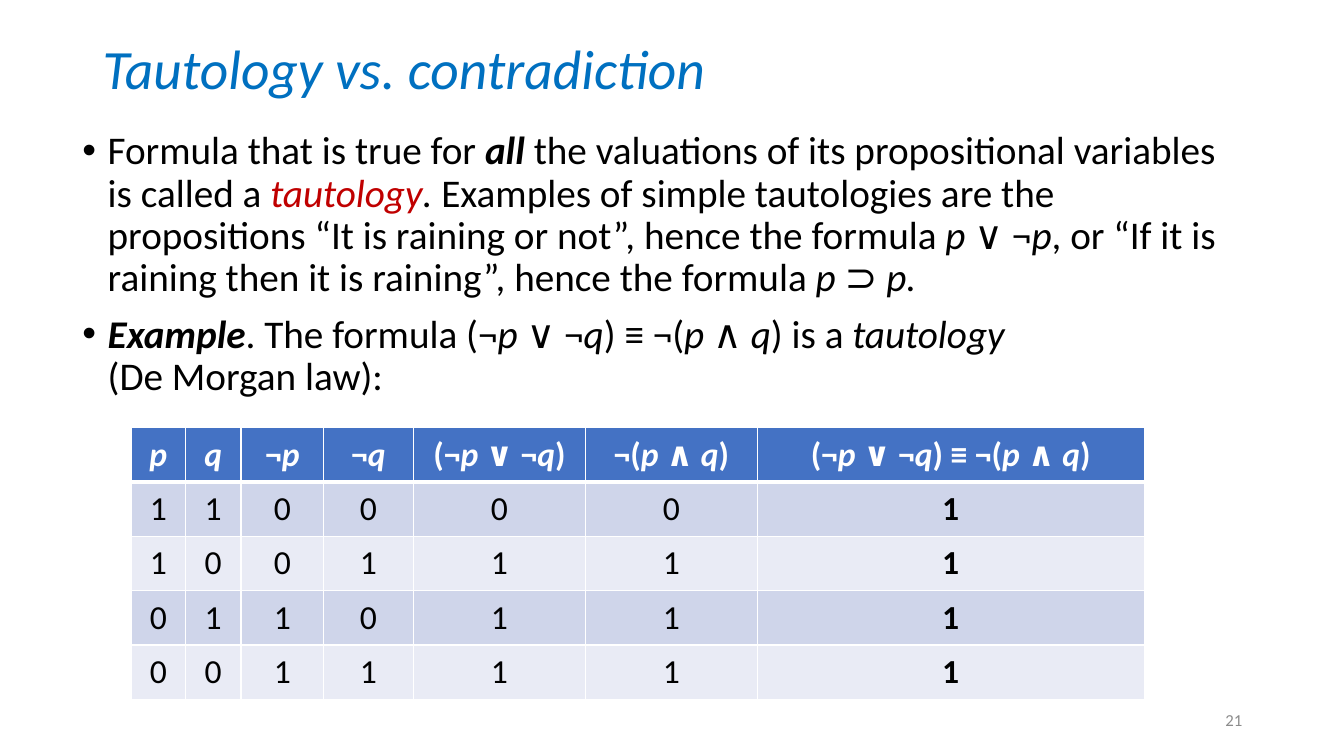
from itertools import groupby, product

from lxml import etree
from pptx import Presentation
from pptx.dml.color import RGBColor
from pptx.enum.text import MSO_ANCHOR, PP_ALIGN
from pptx.oxml.ns import qn
from pptx.util import Inches, Pt

LEFT, CENTER, RIGHT = PP_ALIGN.LEFT, PP_ALIGN.CENTER, PP_ALIGN.RIGHT
TOP, MIDDLE = MSO_ANCHOR.TOP, MSO_ANCHOR.MIDDLE
FONT = "Calibri"
BLACK, WHITE, GRAY = "000000", "FFFFFF", "8C8C8C"
TITLE_BLUE, TERM_RED, HEADER_BLUE = "0070C0", "C00000", "4472C4"
BANDS = ("CFD5EA", "E9EBF5")


def color(value):
    return RGBColor.from_string(value)


def formula(text):
    """Split a formula into runs, with its variables in italics."""
    return [("".join(part), "i" if is_variable else "")
            for is_variable, part in groupby(text, str.isalpha)]


class SlideBuilder:
    def __init__(self, deck):
        self.slide = deck.slides.add_slide(deck.slide_layouts[6])

    def runs(self, para, spans, size, ink=BLACK):
        """Add (text, style) spans: b bold, i italic, r red, n line break after."""
        for text, style in spans:
            span = para.add_run()
            span.text = text
            font = span.font
            font.name, font.size = FONT, Pt(size)
            font.bold, font.italic = "b" in style, "i" in style
            font.color.rgb = color(TERM_RED if "r" in style else ink)
            if "n" in style:
                para.add_line_break()

    def text_box(self, left, top, width, height, anchor=MIDDLE):
        box = self.slide.shapes.add_textbox(
            Inches(left), Inches(top), Inches(width), Inches(height))
        frame = box.text_frame
        frame.word_wrap = True
        frame.vertical_anchor = anchor
        return frame

    def line(self, place, spans, size, ink, align=LEFT):
        para = self.text_box(*place).paragraphs[0]
        para.alignment = align
        para.line_spacing = 0.9
        self.runs(para, spans, size, ink)

    def bullets(self, place, items, size):
        frame = self.text_box(*place, anchor=TOP)
        for index, spans in enumerate(items):
            para = frame.add_paragraph() if index else frame.paragraphs[0]
            para.line_spacing = 0.9
            para.space_before = Pt(10)
            properties = para._p.get_or_add_pPr()
            properties.set("marL", str(Inches(0.25)))
            properties.set("indent", str(-Inches(0.25)))
            etree.SubElement(properties, qn("a:buFont"), typeface="Arial")
            etree.SubElement(properties, qn("a:buChar"), char="•")
            self.runs(para, spans, size)

    def borders(self, cell, top=1, bottom=1):
        properties = cell._tc.get_or_add_tcPr()
        for side, width in (("L", 1), ("R", 1), ("T", top), ("B", bottom)):
            edge = etree.SubElement(properties, qn("a:ln" + side), w=str(Pt(width)))
            fill = etree.SubElement(edge, qn("a:solidFill"))
            etree.SubElement(fill, qn("a:srgbClr"), val=WHITE)

    def cell(self, cell, spans, ink, fill, top=1, bottom=1):
        self.borders(cell, top, bottom)
        cell.fill.solid()
        cell.fill.fore_color.rgb = color(fill)
        cell.vertical_anchor = MIDDLE
        para = cell.text_frame.paragraphs[0]
        para.alignment = CENTER
        self.runs(para, spans, 24, ink)

    def truth_table(self, left, top, widths, row_height, headers, rows):
        count = len(rows) + 1
        table = self.slide.shapes.add_table(
            count, len(widths), Inches(left), Inches(top),
            Inches(sum(widths)), Inches(row_height * count)).table
        table.first_row = table.horz_banding = False
        for column, width in zip(table.columns, widths):
            column.width = Inches(width)
        for row in table.rows:
            row.height = Inches(row_height)
        for column, header in enumerate(headers):
            spans = [(text, style + "b") for text, style in formula(header)]
            self.cell(table.cell(0, column), spans, WHITE, HEADER_BLUE, bottom=3)
        for index, values in enumerate(rows):
            for column, value in enumerate(values):
                style = "b" if column == len(values) - 1 else ""
                self.cell(table.cell(index + 1, column), [(str(value), style)],
                          BLACK, BANDS[index % 2], top=1 if index else 3)


def truth_row(p, q):
    either, neither_both = (1 - p) | (1 - q), 1 - (p & q)
    return p, q, 1 - p, 1 - q, either, neither_both, int(either == neither_both)


def main():
    deck = Presentation()
    deck.slide_width, deck.slide_height = Inches(13.33), Inches(7.5)
    page = SlideBuilder(deck)
    page.line((0.92, 0.4, 11.5, 0.62), [("Tautology vs. contradiction", "i")],
              39.6, TITLE_BLUE)

    tautology = [
        ("Formula that is true for ", ""), ("all", "bi"),
        (" the valuations of its propositional variables is called a ", ""),
        ("tautology", "ir"), (". ", "i"),
        ("Examples of simple tautologies are the propositions "
         "“It is raining or not”, hence the formula ", ""),
        *formula("p ∨ ¬p"),
        (", or “If it is raining then it is raining”, hence the formula ", ""),
        *formula("p ⊃ p"), (".", "i"),
    ]
    example = [
        ("Example", "bi"), (". The formula ", ""),
        *formula("(¬p ∨ ¬q) ≡ ¬(p ∧ q)"), (" is a ", ""),
        ("tautology ", "in"), ("(De Morgan law):", ""),
    ]
    page.bullets((0.72, 1.25, 11.7, 2.85), [tautology, example], 28)

    headers = ["p", "q", "¬p", "¬q", "(¬p ∨ ¬q)", "¬(p ∧ q)",
               "(¬p ∨ ¬q) ≡ ¬(p ∧ q)"]
    rows = [truth_row(p, q) for p, q in product((1, 0), repeat=2)]
    page.truth_table(1.3, 4.24, [0.54, 0.55, 0.82, 0.89, 1.71, 1.7, 3.84], 0.54,
                     headers, rows)
    page.line((9.42, 6.95, 3, 0.4), [("21", "")], 12, GRAY, RIGHT)
    deck.save("out.pptx")


if __name__ == "__main__":
    main()
